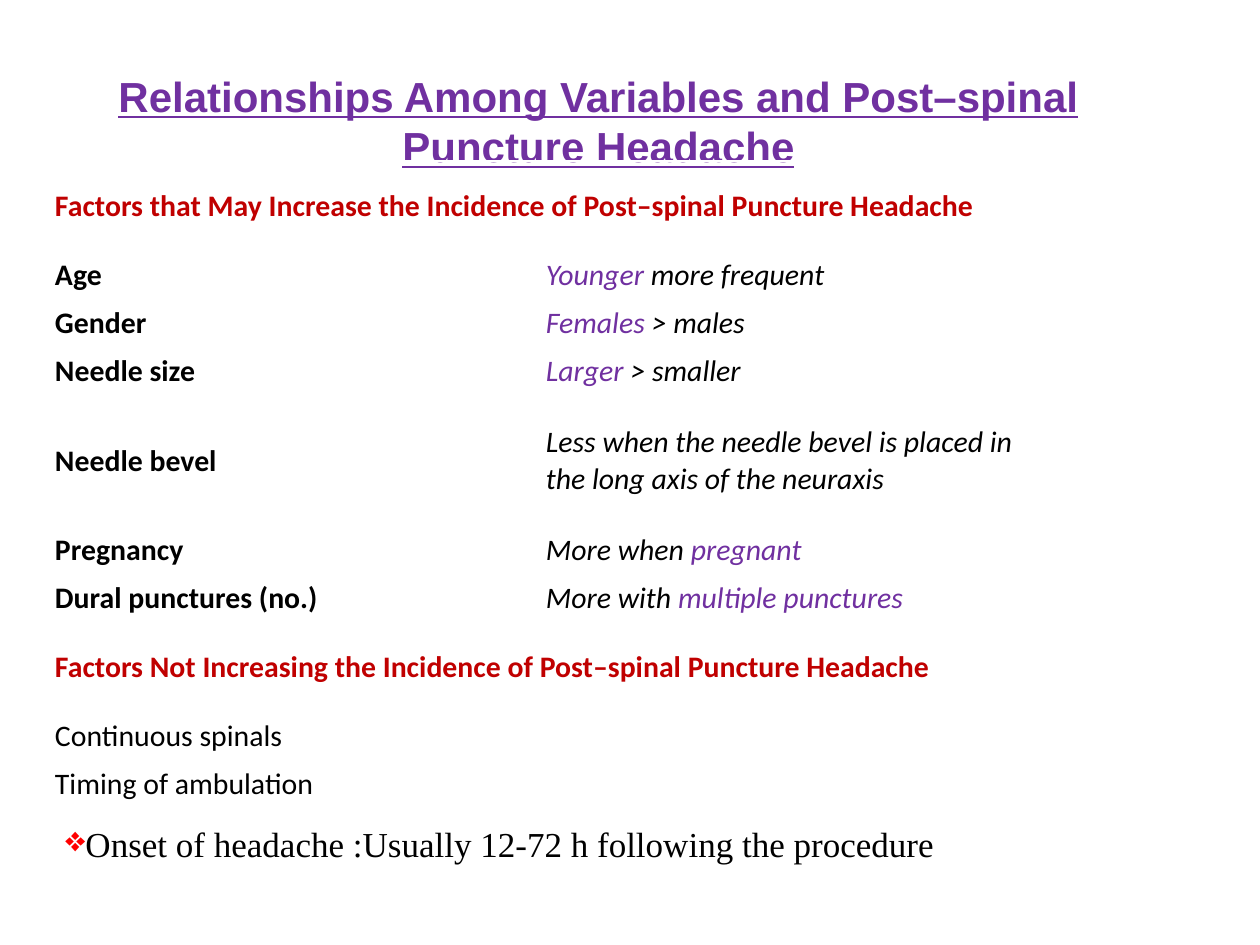
from pptx import Presentation
from pptx.dml.color import RGBColor as RGB
from pptx.enum.text import MSO_ANCHOR as ANCHOR, MSO_AUTO_SIZE as AUTO, PP_ALIGN as ALIGN
from pptx.oxml.ns import qn
from pptx.util import Pt
from lxml.etree import SubElement

THEME = {
    "purple": RGB(0x70, 0x30, 0xA0),
    "heading": RGB(0xC0, 0x00, 0x00),
    "black": RGB(0, 0, 0),
    "bullet": "FF0000",
    "title_font": {"name": "Arial", "size": Pt(24), "bold": True, "underline": True},
    "table_font": {"name": "Calibri", "size": Pt(17)},
    "onset_font": {"name": "Times New Roman", "size": Pt(20), "bold": False},
}
PX = 914400 // 126


def px(*lengths):
    return [length * PX for length in lengths]


def add_text(paragraph, text, color, font):
    run = paragraph.add_run()
    run.text = text
    for attribute, value in font.items():
        setattr(run.font, attribute, value)
    run.font.color.rgb = THEME[color]


prs = Presentation()
prs.slide_width, prs.slide_height = px(1260, 945)
slide = prs.slides.add_slide(prs.slide_layouts[5])

title = slide.shapes.title
title.left, title.top, title.width, title.height = px(84, 63, 1029, 115)
frame_format = {"word_wrap": True, "auto_size": AUTO.NONE, "vertical_anchor": ANCHOR.MIDDLE}
for attribute, value in frame_format.items():
    setattr(title.text_frame, attribute, value)
heading = title.text_frame.paragraphs[0]
heading.alignment = ALIGN.CENTER
add_text(heading, "Relationships Among Variables and Post–spinal Puncture Headache",
         "purple", THEME["title_font"])

SECTION, FACTOR, EFFECT, PLAIN = (
    {**THEME["table_font"], "bold": bold, "italic": italic}
    for bold, italic in [(True, False), (True, False), (False, True), (False, False)]
)
factors = [
    (90, SECTION, "heading", "Factors that May Increase the Incidence of Post–spinal Puncture Headache", []),
    (48, FACTOR, "black", "Age", [("Younger ", "purple"), ("more frequent", "black")]),
    (48, FACTOR, "black", "Gender", [("Females ", "purple"), ("> males", "black")]),
    (48, FACTOR, "black", "Needle size", [("Larger ", "purple"), ("> smaller", "black")]),
    (132, FACTOR, "black", "Needle bevel",
     [("Less when the needle bevel is placed in the long axis of the neuraxis", "black")]),
    (48, FACTOR, "black", "Pregnancy", [("More when", "black"), (" pregnant", "purple")]),
    (48, FACTOR, "black", "Dural punctures (no.)",
     [("More with ", "black"), ("multiple punctures", "purple")]),
    (90, SECTION, "heading", "Factors Not Increasing the Incidence of Post–spinal Puncture Headache", []),
    (48, PLAIN, "black", "Continuous spinals", []),
    (48, PLAIN, "black", "Timing of ambulation", []),
]
total_height = sum(factor[0] for factor in factors)
table = slide.shapes.add_table(len(factors), 2, *px(53, 161, 982, total_height)).table
table.first_row = table.horz_banding = False
cell_format = {"vertical_anchor": ANCHOR.MIDDLE}
cell_format.update(dict.fromkeys(
    ["margin_left", "margin_right", "margin_top", "margin_bottom"], 2 * PX))

for row, (height, font, color, factor, effects) in enumerate(factors):
    table.rows[row].height = height * PX
    label, effect = table.cell(row, 0), table.cell(row, 1)
    for cell in (label, effect):
        cell.fill.background()
        for attribute, value in cell_format.items():
            setattr(cell, attribute, value)
    add_text(label.text_frame.paragraphs[0], factor, color, font)
    for text, effect_color in effects:
        add_text(effect.text_frame.paragraphs[0], text, effect_color, EFFECT)
    if not effects:
        label.merge(effect)

onset = slide.shapes.add_textbox(*px(53, 816, 1113, 55)).text_frame
for attribute, value in frame_format.items():
    setattr(onset, attribute, value)
onset_line = onset.paragraphs[0]
add_text(onset_line, "Onset of headache :Usually 12-72 h following the procedure",
         "black", THEME["onset_font"])
properties = onset_line._p.get_or_add_pPr()
bullet_color = SubElement(properties, qn("a:buClr"))
SubElement(bullet_color, qn("a:srgbClr"), val=THEME["bullet"])
SubElement(properties, qn("a:buChar"), char="❖")

prs.save("out.pptx")
